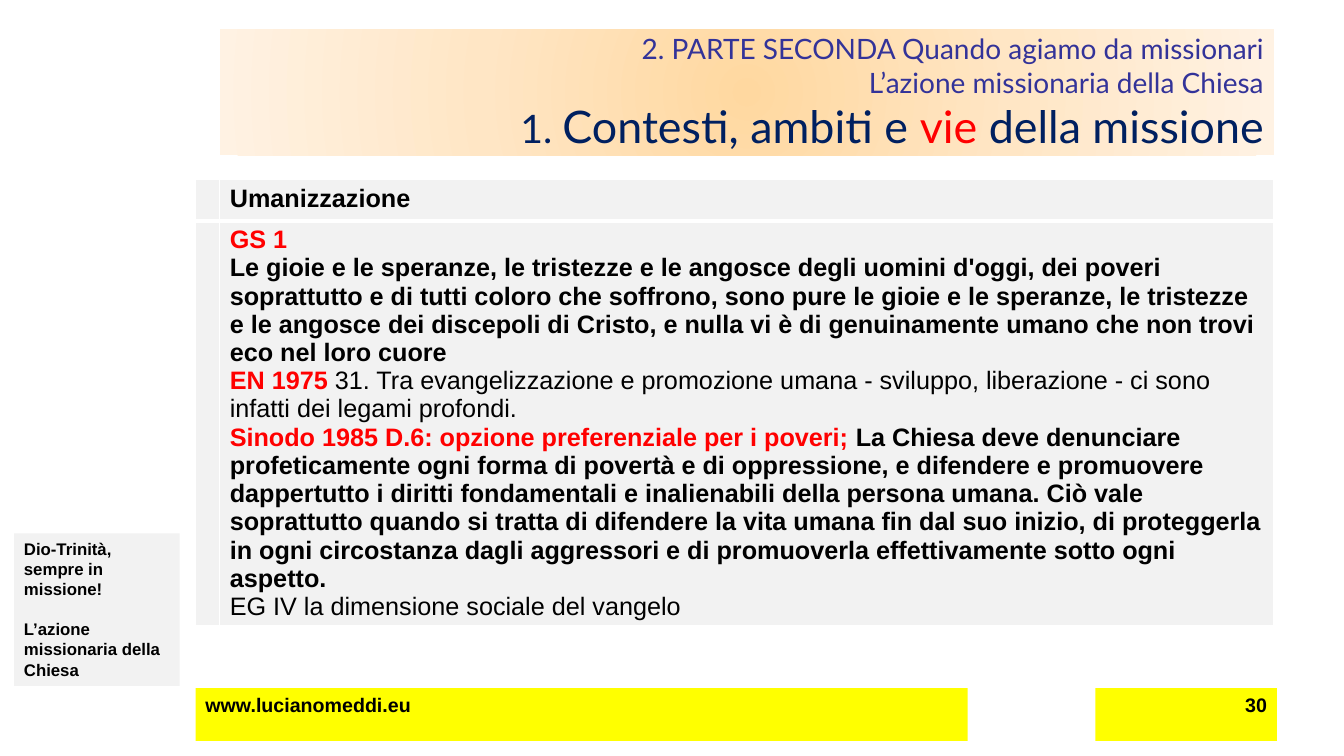
import pptx
import pptx.dml.color
import pptx.enum.shapes
import pptx.enum.text
import pptx.oxml
import pptx.oxml.ns
import pptx.util
from lxml import etree

Pt = pptx.util.Pt
ALIGN = pptx.enum.text.PP_ALIGN
ANCHOR = pptx.enum.text.MSO_ANCHOR

COLORS = {
    "black": "000000",
    "white": "FFFFFF",
    "red": "FF0000",
    "yellow": "FFFF00",
    "gray": "F2F2F2",
    "violet": "333399",
    "navy": "002060",
}
TITLE_GLOW = [(0, "FFD8A0"), (50, "FFE6C5"), (100, "FFF2E3")]

# Each line of the title is a list of (text, size, color).
TITLE_LINES = [
    [("2. PARTE SECONDA Quando agiamo da missionari", 20, "violet")],
    [("L’azione missionaria della Chiesa", 20, "violet")],
    [
        ("1. ", 28, "navy"),
        ("Contesti, ambiti e ", 32, "navy"),
        ("vie", 32, "red"),
        (" della missione", 32, "navy"),
    ],
]

# Each paragraph of the table is a list of (text, color, bold).
HEADING = [[("Umanizzazione", "black", True)]]
QUOTES = [
    [("GS 1", "red", True)],
    [("Le gioie e le speranze, le tristezze e le angosce degli uomini d'oggi, "
      "dei poveri soprattutto e di tutti coloro che soffrono, sono pure le gioie "
      "e le speranze, le tristezze e le angosce dei discepoli di Cristo, e nulla "
      "vi è di genuinamente umano che non trovi eco nel loro cuore", "black", True)],
    [("EN 1975 ", "red", True),
     ("31. Tra evangelizzazione e promozione umana - sviluppo, liberazione - "
      "ci sono infatti dei legami profondi.", "black", False)],
    [("Sinodo 1985 D.6: opzione preferenziale per i poveri; ", "red", True),
     ("La Chiesa deve denunciare profeticamente ogni forma di povertà e di "
      "oppressione, e difendere e promuovere dappertutto i diritti fondamentali "
      "e inalienabili della persona umana. Ciò vale soprattutto quando si tratta "
      "di difendere la vita umana fin dal suo inizio, di proteggerla in ogni "
      "circostanza dagli aggressori e di promuoverla effettivamente sotto ogni "
      "aspetto.", "black", True)],
    [("EG IV la dimensione sociale del vangelo", "black", False)],
]


def rgb(name):
    return pptx.dml.color.RGBColor.from_string(COLORS[name])


def fill_solid(target, color):
    target.fill.solid()
    target.fill.fore_color.rgb = rgb(color)


def fill_radial(shape, stops):
    """Fill a shape with a gradient that spreads from its centre."""
    stop_xml = "".join(
        f'<a:gs pos="{position * 1000}"><a:srgbClr val="{color}"/></a:gs>'
        for position, color in stops
    )
    gradient = pptx.oxml.parse_xml(
        f'<a:gradFill {pptx.oxml.ns.nsdecls("a")} rotWithShape="1">'
        f'<a:gsLst>{stop_xml}</a:gsLst><a:path path="circle">'
        '<a:fillToRect l="50000" t="50000" r="50000" b="50000"/></a:path></a:gradFill>'
    )
    shape.fill.background()
    placeholder_fill = shape._element.spPr.find(pptx.oxml.ns.qn("a:noFill"))
    placeholder_fill.getparent().replace(placeholder_fill, gradient)


def add_panel(slide, left, top, width, height, color, anchor=ANCHOR.TOP):
    shape = slide.shapes.add_shape(
        pptx.enum.shapes.MSO_SHAPE.RECTANGLE, Pt(left), Pt(top), Pt(width), Pt(height)
    )
    shape.shadow.inherit = False
    shape.line.fill.background()
    fill_solid(shape, color)
    shape.text_frame.word_wrap = True
    shape.text_frame.vertical_anchor = anchor
    return shape


def write_label(shape, lines, size, align=ALIGN.LEFT):
    shape.text_frame.text = "\n".join(lines)
    for paragraph in shape.text_frame.paragraphs:
        paragraph.alignment = align
        paragraph.font.name = "Arial"
        paragraph.font.size = Pt(size)
        paragraph.font.bold = True
        paragraph.font.color.rgb = rgb("black")


def add_title(slide):
    shape = add_panel(slide, 157, 20.9, 753, 90, "white", ANCHOR.MIDDLE)
    fill_radial(shape, TITLE_GLOW)
    paragraph = shape.text_frame.paragraphs[0]
    paragraph.alignment = ALIGN.RIGHT
    paragraph.font.name = "Lato"
    for index, line in enumerate(TITLE_LINES):
        if index:
            paragraph.add_line_break()
        for text, size, color in line:
            run = paragraph.add_run()
            run.text = text
            run.font.size = Pt(size)
            run.font.color.rgb = rgb(color)


def set_borders(cell, bottom_width):
    properties = cell._tc.get_or_add_tcPr()
    for side, width in (("L", 1), ("R", 1), ("T", 1), ("B", bottom_width)):
        line = etree.SubElement(
            properties, pptx.oxml.ns.qn(f"a:ln{side}"), w=str(Pt(width))
        )
        solid = etree.SubElement(line, pptx.oxml.ns.qn("a:solidFill"))
        etree.SubElement(solid, pptx.oxml.ns.qn("a:srgbClr"), val=COLORS["white"])


def write_cell(cell, paragraphs):
    for index, runs in enumerate(paragraphs):
        frame = cell.text_frame
        paragraph = frame.add_paragraph() if index else frame.paragraphs[0]
        paragraph.font.name = "Arial"
        paragraph.font.size = Pt(18)
        for text, color, bold in runs:
            run = paragraph.add_run()
            run.text = text
            run.font.bold = bold
            run.font.color.rgb = rgb(color)


def add_quote_table(slide):
    table = slide.shapes.add_table(
        2, 2, Pt(139.7), Pt(128.2), Pt(770.3), Pt(317.5)
    ).table
    for column, width in zip(table.columns, (17.3, 753)):
        column.width = Pt(width)
    for row, height, bottom_width, content in zip(
        table.rows, (29.5, 288), (3, 1), (HEADING, QUOTES)
    ):
        row.height = Pt(height)
        for cell in row.cells:
            set_borders(cell, bottom_width)
            fill_solid(cell, "gray")
        write_cell(row.cells[1], content)


def main():
    presentation = pptx.Presentation()
    presentation.slide_width = Pt(960)
    presentation.slide_height = Pt(540)
    slide = presentation.slides.add_slide(presentation.slide_layouts[6])

    sidebar = add_panel(slide, 10, 381, 118.4, 109, "gray")
    write_label(
        sidebar,
        ["Dio-Trinità, sempre in missione!", "L’azione", "missionaria della Chiesa"],
        12,
    )
    sidebar.text_frame.paragraphs[1].space_before = Pt(14.4)

    add_title(slide)
    website = add_panel(slide, 139.7, 491.6, 551.5, 37.6, "yellow")
    write_label(website, ["www.lucianomeddi.eu"], 14)
    page_number = add_panel(slide, 782.5, 491.6, 129.6, 37.6, "yellow")
    write_label(page_number, ["30"], 14, ALIGN.RIGHT)
    add_quote_table(slide)

    presentation.save("out.pptx")


if __name__ == "__main__":
    main()
